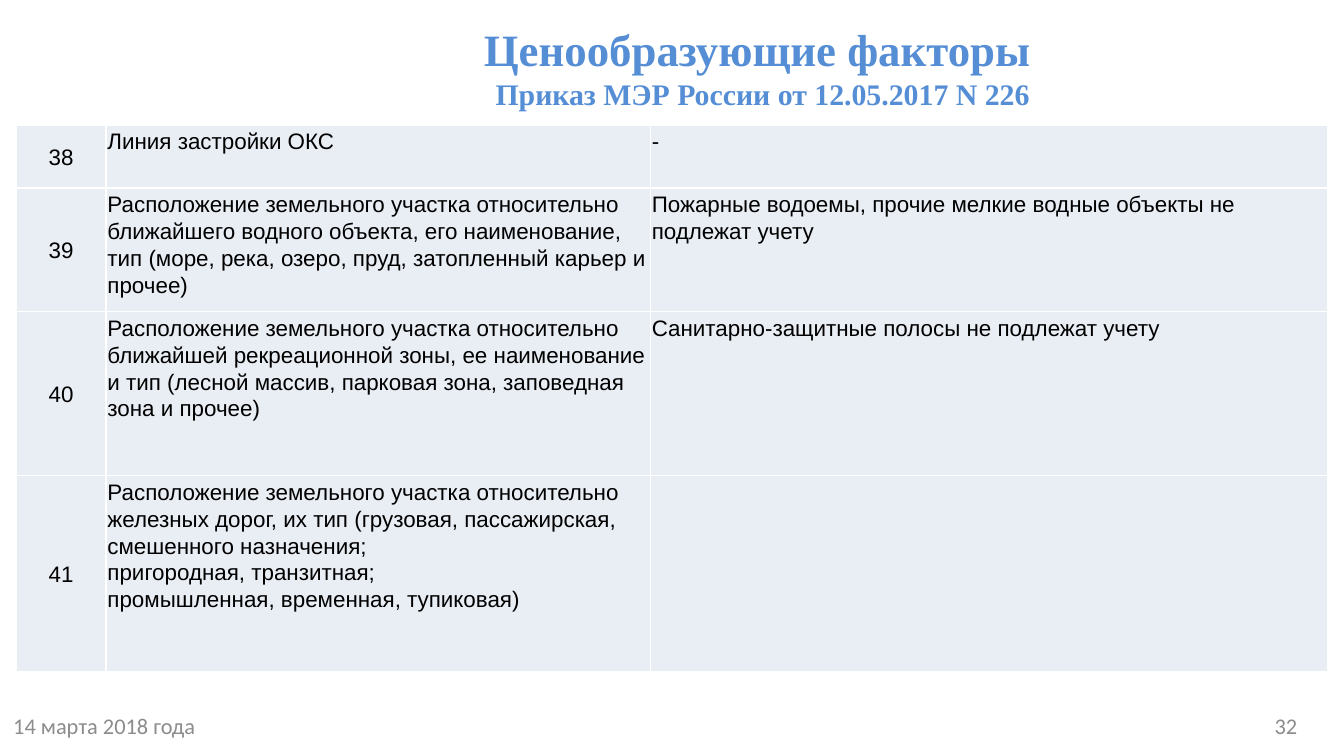
from lxml import etree
from pptx import Presentation
from pptx.dml.color import RGBColor
from pptx.enum.text import MSO_ANCHOR, MSO_AUTO_SIZE, PP_ALIGN
from pptx.oxml.ns import qn
from pptx.util import Inches, Pt

LEFT, CENTER, RIGHT = PP_ALIGN.LEFT, PP_ALIGN.CENTER, PP_ALIGN.RIGHT
TOP, MIDDLE = MSO_ANCHOR.TOP, MSO_ANCHOR.MIDDLE
FIXED_SIZE = MSO_AUTO_SIZE.NONE
TITLE_ONLY = 5

SLIDE_WIDTH = 10
SLIDE_HEIGHT = SLIDE_WIDTH * 9 / 16

COLORS = {
    "title": "558ED5",
    "text": "000000",
    "footer": "8C8C8C",
    "cell": "E9EDF4",
    "border": "FFFFFF",
}

COLUMN_WIDTHS = [0.67, 4.05, 5.04]
ROW_HEIGHTS = [0.47, 0.92, 1.22, 1.46]

# Number, factor, note
FACTORS = [
    ("38", "Линия застройки ОКС", "-"),
    ("39",
     "Расположение земельного участка относительно ближайшего водного объекта, "
     "его наименование, тип (море, река, озеро, пруд, затопленный карьер и прочее)",
     "Пожарные водоемы, прочие мелкие водные объекты не подлежат учету"),
    ("40",
     "Расположение земельного участка относительно ближайшей рекреационной зоны, "
     "ее наименование и тип (лесной массив, парковая зона, заповедная зона и прочее)",
     "Санитарно-защитные полосы не подлежат учету"),
    ("41",
     "Расположение земельного участка относительно железных дорог, их тип "
     "(грузовая, пассажирская, смешенного назначения;\n"
     "пригородная, транзитная;\n"
     "промышленная, временная, тупиковая)",
     ""),
]


def add_run(paragraph, text, *, size=12, font="Arial", color="text", bold=False):
    run = paragraph.add_run()
    run.text = text
    run.font.size = Pt(size)
    run.font.name = font
    run.font.bold = bold
    run.font.color.rgb = RGBColor.from_string(COLORS[color])


def write_paragraphs(frame, text, *, align=LEFT, spacing=1.0, **run_format):
    for index, line in enumerate(text.split("\n")):
        paragraph = frame.add_paragraph() if index else frame.paragraphs[0]
        paragraph.alignment = align
        paragraph.line_spacing = spacing
        if line:
            add_run(paragraph, line, **run_format)


def add_title(slide):
    title = slide.shapes.title
    title.left, title.top = Inches(1.61), Inches(0.11)
    title.width, title.height = Inches(8.13), Inches(0.65)
    frame = title.text_frame
    frame.auto_size = FIXED_SIZE
    frame.vertical_anchor = TOP
    frame.margin_top = Inches(0.05)
    heading = frame.paragraphs[0]
    heading.alignment = CENTER
    style = {"font": "Times New Roman", "color": "title", "bold": True}
    add_run(heading, "Ценообразующие факторы ", size=24, **style)
    heading.add_line_break()
    add_run(heading, "Приказ МЭР России от 12.05.2017 N 226", size=16, **style)


def add_footer(slide, text, left, top, width, height, align):
    box = slide.shapes.add_textbox(Inches(left), Inches(top), Inches(width), Inches(height))
    frame = box.text_frame
    frame.word_wrap = True
    frame.vertical_anchor = MIDDLE
    write_paragraphs(frame, text, align=align, font="Calibri", color="footer")


def set_borders(cell):
    properties = cell._tc.get_or_add_tcPr()
    for side in ("a:lnL", "a:lnR", "a:lnT", "a:lnB"):
        line = etree.SubElement(properties, qn(side), w=str(Pt(1)))
        fill = etree.SubElement(line, qn("a:solidFill"))
        etree.SubElement(fill, qn("a:srgbClr"), val=COLORS["border"])


def fill_cell(cell, text, is_number):
    set_borders(cell)
    cell.fill.solid()
    cell.fill.fore_color.rgb = RGBColor.from_string(COLORS["cell"])
    cell.margin_left = cell.margin_right = Inches(0.01)
    cell.margin_top = cell.margin_bottom = Inches(0.02)
    cell.vertical_anchor = MIDDLE if is_number else TOP
    write_paragraphs(cell.text_frame, text, spacing=1.07,
                     align=CENTER if is_number else LEFT)


def add_factor_table(slide):
    table = slide.shapes.add_table(
        len(FACTORS), len(COLUMN_WIDTHS), Inches(0.12), Inches(0.93),
        Inches(sum(COLUMN_WIDTHS)), Inches(sum(ROW_HEIGHTS))).table
    table.first_row = table.horz_banding = False
    for column, width in zip(table.columns, COLUMN_WIDTHS):
        column.width = Inches(width)
    for row, height, factor in zip(table.rows, ROW_HEIGHTS, FACTORS):
        row.height = Inches(height)
        for index, (cell, text) in enumerate(zip(row.cells, factor)):
            fill_cell(cell, text, is_number=index == 0)


def main():
    deck = Presentation()
    deck.slide_width, deck.slide_height = Inches(SLIDE_WIDTH), Inches(SLIDE_HEIGHT)
    slide = deck.slides.add_slide(deck.slide_layouts[TITLE_ONLY])

    add_title(slide)
    # Date and slide number
    add_footer(slide, "14 марта 2018 года", 0, 5.27, 1.61, 0.25, LEFT)
    add_footer(slide, "32", 8.7, 5.29, 1.05, 0.22, RIGHT)
    add_factor_table(slide)

    deck.save("out.pptx")


if __name__ == "__main__":
    main()
